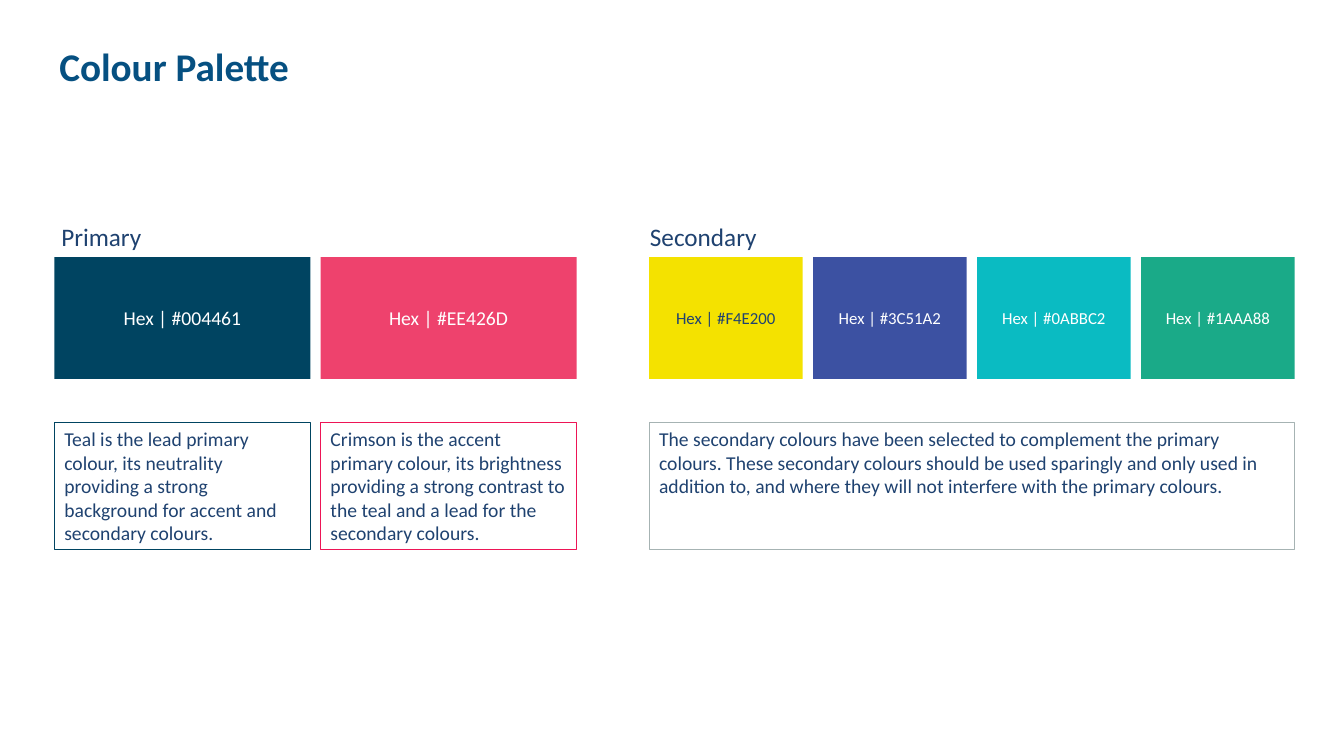
from dataclasses import dataclass

from pptx import Presentation
from pptx.dml.color import RGBColor
from pptx.enum.shapes import MSO_SHAPE
from pptx.enum.text import MSO_ANCHOR, PP_ALIGN
from pptx.util import Pt


@dataclass(frozen=True)
class Theme:
    font: str = "Calibri"
    title: str = "065081"
    ink: str = "1F4270"
    white: str = "FFFFFF"
    teal: str = "004461"
    crimson: str = "EE426D"
    crimson_line: str = "ED1556"
    grey_line: str = "A6B3B3"
    yellow: str = "F4E200"
    indigo: str = "3C51A2"
    turquoise: str = "0ABBC2"
    green: str = "1AAA88"
    title_size: int = 28
    label_size: int = 18
    body_size: int = 14
    small_size: int = 12


THEME = Theme()
PRIMARY_LEFT, PRIMARY_WIDTH, PRIMARY_STEP = 38.9, 182.9, 190.1
SECONDARY_LEFT, SECONDARY_WIDTH, SECONDARY_STEP = 463.7, 109.6, 117.15
SWATCH_TOP, SWATCH_HEIGHT = 183.7, 87
NOTE_TOP, NOTE_HEIGHT = 301.5, 91


def write(shape, text, size, color, align=PP_ALIGN.LEFT, anchor=MSO_ANCHOR.MIDDLE,
          bold=False, wrap=True):
    frame = shape.text_frame
    frame.word_wrap = wrap
    frame.vertical_anchor = anchor
    para = frame.paragraphs[0]
    para.text = text
    para.alignment = align
    para.font.name = THEME.font
    para.font.size = Pt(size)
    para.font.bold = bold
    para.font.color.rgb = RGBColor.from_string(color)


def add_label(page, left, top, width, height, text, size, color, **style):
    box = page.shapes.add_textbox(Pt(left), Pt(top), Pt(width), Pt(height))
    write(box, text, size, color, **style)


def add_box(page, left, top, width, height):
    box = page.shapes.add_shape(MSO_SHAPE.RECTANGLE, Pt(left), Pt(top), Pt(width), Pt(height))
    box.shadow.inherit = False
    return box


def add_swatch(page, left, width, fill, size, color=THEME.white):
    box = add_box(page, left, SWATCH_TOP, width, SWATCH_HEIGHT)
    box.fill.solid()
    box.fill.fore_color.rgb = RGBColor.from_string(fill)
    box.line.fill.background()
    write(box, f"Hex | #{fill}", size, color, align=PP_ALIGN.CENTER)


def add_note(page, left, width, line, text, anchor=MSO_ANCHOR.MIDDLE):
    box = add_box(page, left, NOTE_TOP, width, NOTE_HEIGHT)
    box.fill.background()
    box.line.color.rgb = RGBColor.from_string(line)
    box.line.width = Pt(0.5)
    write(box, text, THEME.body_size, THEME.ink, anchor=anchor)


def main():
    deck = Presentation()
    deck.slide_width, deck.slide_height = Pt(960), Pt(540)
    page = deck.slides.add_slide(deck.slide_layouts[6])

    add_label(page, 35.3, 30.2, 779, 34, "Colour Palette", THEME.title_size, THEME.title, bold=True)
    for left, width, text in ((36.7, 72, "Primary"), (457.2, 91.4, "Secondary")):
        add_label(page, left, 154.8, width, 28.8, text, THEME.label_size, THEME.ink,
                  anchor=MSO_ANCHOR.TOP, wrap=False)

    primaries = (
        (THEME.teal, THEME.teal,
         "Teal is the lead primary colour, its neutrality providing a strong "
         "background for accent and secondary colours."),
        (THEME.crimson, THEME.crimson_line,
         "Crimson is the accent primary colour, its brightness providing a strong "
         "contrast to the teal and a lead for the secondary colours."),
    )
    for index, (fill, line, text) in enumerate(primaries):
        left = PRIMARY_LEFT + index * PRIMARY_STEP
        add_swatch(page, left, PRIMARY_WIDTH, fill, THEME.body_size)
        add_note(page, left, PRIMARY_WIDTH, line, text)

    secondaries = (
        (THEME.yellow, THEME.ink),
        (THEME.indigo, THEME.white),
        (THEME.turquoise, THEME.white),
        (THEME.green, THEME.white),
    )
    for index, (fill, color) in enumerate(secondaries):
        left = SECONDARY_LEFT + index * SECONDARY_STEP
        add_swatch(page, left, SECONDARY_WIDTH, fill, THEME.small_size, color)
    add_note(page, SECONDARY_LEFT, 3 * SECONDARY_STEP + SECONDARY_WIDTH, THEME.grey_line,
             "The secondary colours have been selected to complement the primary colours. "
             "These secondary colours should be used sparingly and only used in addition to, "
             "and where they will not interfere with the primary colours.",
             anchor=MSO_ANCHOR.TOP)

    deck.save("out.pptx")


if __name__ == "__main__":
    main()
